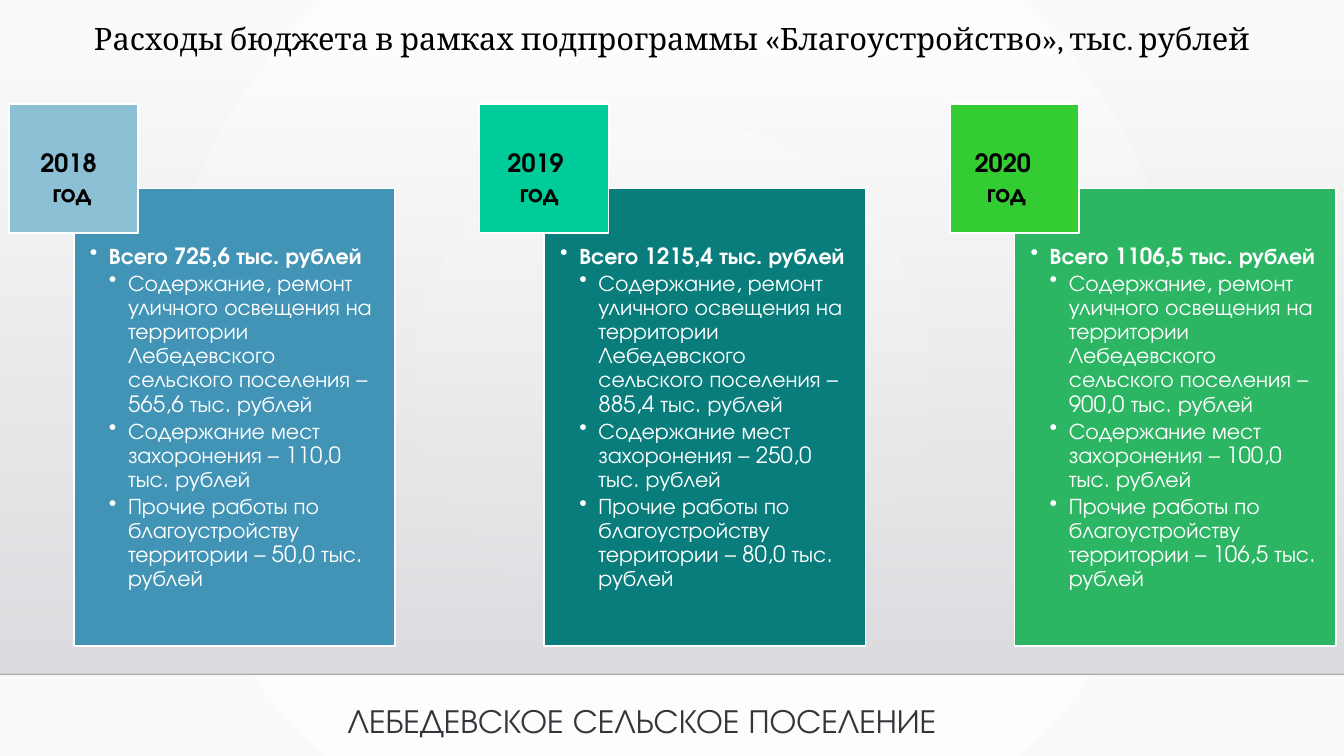
from lxml import etree
from pptx import Presentation
from pptx import util as u
from pptx.dml.color import RGBColor
from pptx.enum import shapes, text
from pptx.oxml import parse_xml
from pptx.oxml.ns import nsdecls, qn

WHITE = RGBColor(0xFF, 0xFF, 0xFF)
PAPER = RGBColor(0xFA, 0xFA, 0xFA)
BAND_TOP = RGBColor(0xDC, 0xDC, 0xE0)
BAND_BOTTOM = RGBColor(0xDE, 0xDE, 0xE2)
BLACK = RGBColor(0, 0, 0)
RULE = RGBColor(0, 0, 1)
FOOTER = RGBColor(0x34, 0x34, 0x3B)
BLUE, PALE_BLUE = RGBColor(0x42, 0x94, 0xB6), RGBColor(0x8C, 0xC0, 0xD5)
TEAL, MINT = RGBColor(0x08, 0x7D, 0x7C), RGBColor(0x00, 0xCC, 0x99)
GREEN, LIME = RGBColor(0x2C, 0xB6, 0x63), RGBColor(0x33, 0xCC, 0x33)

SERIF = "Cambria"
SANS = "TeX Gyre Adventor"
CARD_PITCH = 35
YEAR_PITCH = 34.76

YEARS = [
    ("2018", BLUE, PALE_BLUE, "725,6", "565,6", "110,0", "50,0"),
    ("2019", TEAL, MINT, "1215,4", "885,4", "250,0", "80,0"),
    ("2020", GREEN, LIME, "1106,5", "900,0", "100,0", "106,5"),
]
EXPENSES = [
    "Всего",
    "Содержание, ремонт уличного освещения на территории Лебедевского сельского поселения –",
    "Содержание мест захоронения –",
    "Прочие работы по благоустройству территории –",
]


class BudgetSlide:
    def __init__(self, presentation):
        self.width = presentation.slide_width
        self.height = presentation.slide_height
        self.slide = presentation.slides.add_slide(presentation.slide_layouts[6])

    def area(self, left, top, width, height):
        return [round(share * side / 100) for share, side in
                zip((left, top, width, height), (self.width, self.height) * 2)]

    def apply(self, target, formats):
        for name, value in formats.items():
            setattr(target, name, value)

    def set_opacity(self, color, percent):
        etree.SubElement(color, qn("a:alpha"), val=str(percent * 1000))

    def gradient(self, fill, colors):
        fill.gradient()
        for position, (stop, color) in enumerate(zip(fill.gradient_stops, colors)):
            stop.position = position
            stop.color.rgb = color

    def background(self, center, edge):
        self.gradient(self.slide.background.fill, (center, edge))
        linear = self.slide.element.xpath(".//p:bg//a:lin")[0]
        linear.getparent().replace(linear, parse_xml(
            f'<a:path {nsdecls("a")} path="circle">'
            '<a:fillToRect l="50000" t="50000" r="50000" b="50000"/></a:path>'))

    def rectangle(self, area, color=None):
        shape = self.slide.shapes.add_shape(
            shapes.MSO_SHAPE.RECTANGLE, *self.area(*area))
        shape.shadow.inherit = False
        if color is not None:
            shape.fill.solid()
            shape.fill.fore_color.rgb = color
            shape.line.color.rgb = WHITE
            shape.line.width = u.Pt(1.25)
        return shape

    def band(self, area):
        shape = self.rectangle(area)
        shape.line.fill.background()
        self.gradient(shape.fill, (BAND_TOP, BAND_BOTTOM))
        shape.fill.gradient_angle = 270
        self.set_opacity(shape.element.xpath(".//a:gs/a:srgbClr")[0], 0)

    def rule(self, top):
        left, y, length, _ = self.area(0, top, 100, 0)
        line = self.slide.shapes.add_connector(
            shapes.MSO_CONNECTOR.STRAIGHT, left, y, left + length, y)
        line.line.color.rgb = RULE
        line.line.width = u.Pt(1)
        self.set_opacity(line.element.xpath(".//a:ln//a:srgbClr")[0], 20)
        etree.SubElement(line.element.spPr, qn("a:effectLst"))

    def add_lines(self, frame, lines, font, align, spacing=1.0):
        for index, line in enumerate(lines):
            paragraph = frame.paragraphs[0] if index == 0 else frame.add_paragraph()
            paragraph.text = line
            self.apply(paragraph, {"alignment": align, "line_spacing": spacing})
            self.style_font(paragraph, font)

    def style_font(self, paragraph, font):
        size, name, color, bold = font
        self.apply(paragraph.font, {"size": u.Pt(size), "name": name, "bold": bold})
        paragraph.font.color.rgb = color

    def label(self, area, lines, font, align, spacing=1.0, wrap=True):
        frame = self.slide.shapes.add_textbox(*self.area(*area)).text_frame
        frame.word_wrap = wrap
        self.add_lines(frame, lines, font, align, spacing)

    def card(self, area, color, lines):
        frame = self.rectangle(area, color).text_frame
        self.apply(frame, {
            "word_wrap": True,
            "vertical_anchor": text.MSO_ANCHOR.TOP,
            "margin_left": u.Inches(0.16),
            "margin_top": u.Inches(0.56),
            "margin_right": u.Inches(0.16),
            "margin_bottom": u.Inches(0.16),
        })
        self.add_lines(frame, lines, (16, SANS, WHITE, False), text.PP_ALIGN.LEFT, 0.9)
        for index, paragraph in enumerate(frame.paragraphs):
            level = 1 if index == 0 else 2
            self.apply(paragraph, {"level": level, "space_after": u.Pt(2)})
            paragraph.font.bold = index == 0
            properties = paragraph._p.get_or_add_pPr()
            properties.set("marL", str(u.Inches(0.19 * level)))
            properties.set("indent", str(-u.Inches(0.19)))
            bullet = parse_xml(f'<a:buChar {nsdecls("a")} char="•"/>')
            properties.find(qn("a:defRPr")).addprevious(bullet)


def main():
    presentation = Presentation()
    presentation.slide_width = u.Inches(13.33)
    presentation.slide_height = u.Inches(7.5)
    budget = BudgetSlide(presentation)
    center, left = text.PP_ALIGN.CENTER, text.PP_ALIGN.LEFT

    budget.background(WHITE, PAPER)
    budget.band((0, 6.8, 100, 82.4))
    budget.rule(89.2)
    budget.label((0, 2.53, 100, 12.8),
                 ["Расходы бюджета в рамках подпрограммы «Благоустройство», тыс. рублей"],
                 (22, SERIF, BLACK, False), center, 0.9)
    budget.label((25.13, 91.87, 49.8, 6.67), ["ЛЕБЕДЕВСКОЕ СЕЛЬСКОЕ ПОСЕЛЕНИЕ"],
                 (24, SANS, FOOTER, False), left)

    for column, (year, card_color, tab_color, *amounts) in enumerate(YEARS):
        shift = column * CARD_PITCH
        lines = [f"{expense} {amount} тыс. рублей"
                 for expense, amount in zip(EXPENSES, amounts)]
        budget.card((5.48 + shift, 24.93, 23.92, 60.53), card_color, lines)
        budget.rectangle((0.68 + shift, 13.73, 9.6, 17.07), tab_color)
        budget.label((2.25 + column * YEAR_PITCH, 18.8, 6.22, 9.47),
                     [f"{year} ", "год"], (18, SANS, BLACK, True), center, wrap=False)

    presentation.save("out.pptx")


if __name__ == "__main__":
    main()
